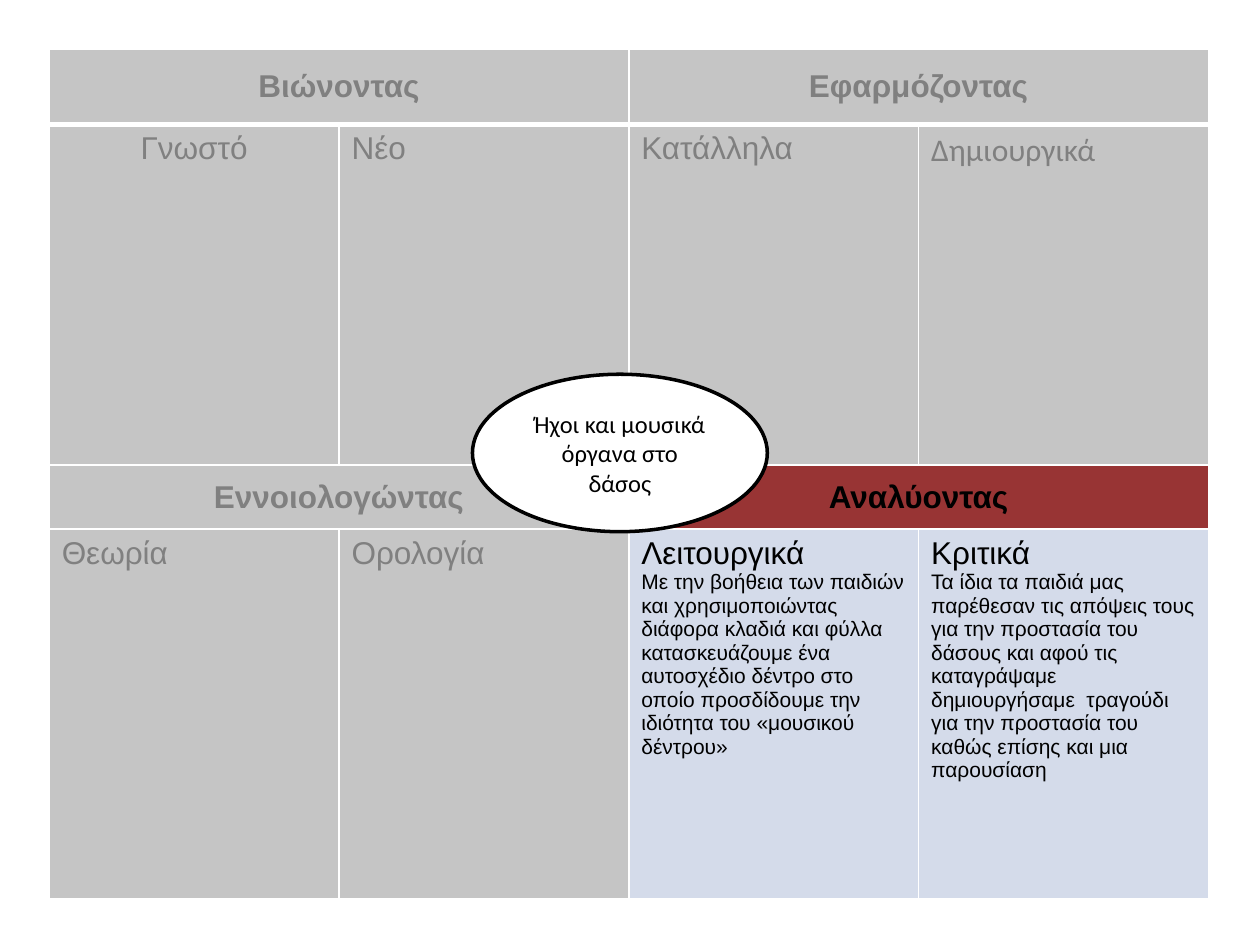
from dataclasses import dataclass

from lxml import etree
from pptx import Presentation
from pptx import util as u
from pptx.dml.color import RGBColor
from pptx.enum import shapes, text
from pptx.oxml import ns


@dataclass(frozen=True)
class Theme:
    muted_fill: str = "BFBFBF"
    muted_text: str = "808080"
    accent: str = "8D1F1F"
    active_fill: str = "D0D8E8"
    ink: str = "000000"
    paper: str = "FFFFFF"
    font: str = "Arial"
    alt_font: str = "Calibri"
    heading: int = 18
    label: int = 14
    body: int = 12
    opacity: int = 90


class SlideBuilder:
    """Holds the theme and the slide; lengths are inches on a 10 x 7.5 page."""

    def __init__(self, s, theme):
        self.s, self.theme = s, theme

    def set_text(self, tf, lines, color, font, bold=False, centred=False):
        """Set (text, size) pairs, one paragraph each."""
        tf.text = "\n".join(line for line, _ in lines)
        for p, (_, size) in zip(tf.paragraphs, lines):
            p.alignment = text.PP_ALIGN.CENTER if centred else text.PP_ALIGN.LEFT
            for r in p.runs:
                r.font.size, r.font.name, r.font.bold = u.Pt(size), font, bold
                r.font.color.rgb = RGBColor.from_string(color)

    def grid(self, left, top, col_width, cols, row_heights):
        frame = self.s.shapes.add_table(
            len(row_heights), cols, u.Inches(left), u.Inches(top),
            u.Inches(col_width * cols), u.Inches(sum(row_heights)))
        table = frame.table
        for col in table.columns:
            col.width = u.Inches(col_width)
        for row, height in zip(table.rows, row_heights):
            row.height = u.Inches(height)
        return table

    def paint(self, cell, color, bottom=1):
        """Translucent fill with white borders, given in points."""
        cell.fill.solid()
        cell.fill.fore_color.rgb = RGBColor.from_string(color)
        tc_pr = cell._tc.get_or_add_tcPr()
        clr = tc_pr.find(".//" + ns.qn("a:srgbClr"))
        etree.SubElement(clr, ns.qn("a:alpha"), val=str(self.theme.opacity * 1000))
        for i, (side, width) in enumerate(zip("LRTB", (1, 1, 1, bottom))):
            ln = etree.Element(ns.qn("a:ln" + side), w=str(u.Pt(width)))
            fill = etree.SubElement(ln, ns.qn("a:solidFill"))
            etree.SubElement(fill, ns.qn("a:srgbClr"), val=self.theme.paper)
            tc_pr.insert(i, ln)

    def header(self, table, row, col, title, fill, color, bottom=1):
        """Heading across two columns."""
        cells = [table.cell(row, col), table.cell(row, col + 1)]
        for cell in cells:
            self.paint(cell, fill, bottom)
        cells[0].merge(cells[1])
        cells[0].vertical_anchor = text.MSO_ANCHOR.MIDDLE
        self.set_text(cells[0].text_frame, [(title, self.theme.heading)], color,
                      self.theme.font, bold=True, centred=True)

    def entry(self, table, row, col, title, body, fill, color, font, centred):
        cell = table.cell(row, col)
        self.paint(cell, fill)
        lines = [(title, self.theme.heading)]
        if body:
            lines.append((body, self.theme.body))
        self.set_text(cell.text_frame, lines, color, font, centred=centred)

    def oval(self, left, top, width, height, label):
        t = self.theme
        sp = self.s.shapes.add_shape(
            shapes.MSO_SHAPE.OVAL, *map(u.Inches, (left, top, width, height)))
        sp.shadow.inherit = False
        sp.fill.solid()
        sp.fill.fore_color.rgb = RGBColor.from_string(t.paper)
        sp.line.color.rgb = RGBColor.from_string(t.ink)
        sp.line.width = u.Pt(2)
        tf = sp.text_frame
        tf.word_wrap = True
        tf.vertical_anchor = text.MSO_ANCHOR.MIDDLE
        self.set_text(tf, [(label, t.label)], t.ink, t.alt_font, centred=True)


FUNCTIONAL = (
    "Με την βοήθεια των παιδιών και χρησιμοποιώντας διάφορα κλαδιά και φύλλα "
    "κατασκευάζουμε ένα αυτοσχέδιο δέντρο στο οποίο προσδίδουμε την ιδιότητα "
    "του «μουσικού δέντρου»")
CRITICAL = (
    "Τα ίδια τα παιδιά μας παρέθεσαν τις απόψεις τους για την προστασία του "
    "δάσους και αφού τις καταγράψαμε δημιουργήσαμε  τραγούδι για την προστασία "
    "του καθώς επίσης και μια παρουσίαση")

# Each quadrant: heading and its two (title, body) entries
QUADRANTS = [
    [("Βιώνοντας", [("Γνωστό", ""), ("Νέο", "")]),
     ("Εφαρμόζοντας", [("Κατάλληλα", ""), ("Δημιουργικά", "")])],
    [("Εννοιολογώντας", [("Θεωρία", ""), ("Ορολογία", "")]),
     ("Αναλύοντας", [("Λειτουργικά", FUNCTIONAL), ("Κριτικά", CRITICAL)])],
]
ACTIVE = "Αναλύοντας"
CENTRED = "Γνωστό"
ALT_FONT = "Δημιουργικά"


def main():
    prs = Presentation()
    prs.slide_width, prs.slide_height = u.Inches(10), u.Inches(7.5)
    t = Theme()
    page = SlideBuilder(prs.slides.add_slide(prs.slide_layouts[6]), t)

    # Four quadrants; only the active one is in full colour
    table = page.grid(0.39, 0.39, 2.3, 4, (0.6, 2.7, 0.51, 2.93))
    for band, quadrants in enumerate(QUADRANTS):
        for side, (heading, entries) in enumerate(quadrants):
            active = heading == ACTIVE
            color = t.ink if active else t.muted_text
            page.header(table, 2 * band, 2 * side, heading,
                        t.accent if active else t.muted_fill, color,
                        bottom=1 if band else 3)
            for i, (title, body) in enumerate(entries):
                page.entry(table, 2 * band + 1, 2 * side + i, title, body,
                           t.active_fill if active else t.muted_fill, color,
                           t.alt_font if title == ALT_FONT else t.font,
                           title == CENTRED)

    # Topic in the middle
    page.oval(3.75, 2.97, 2.34, 1.25, "Ήχοι και μουσικά όργανα στο δάσος")
    prs.save("out.pptx")


if __name__ == "__main__":
    main()
